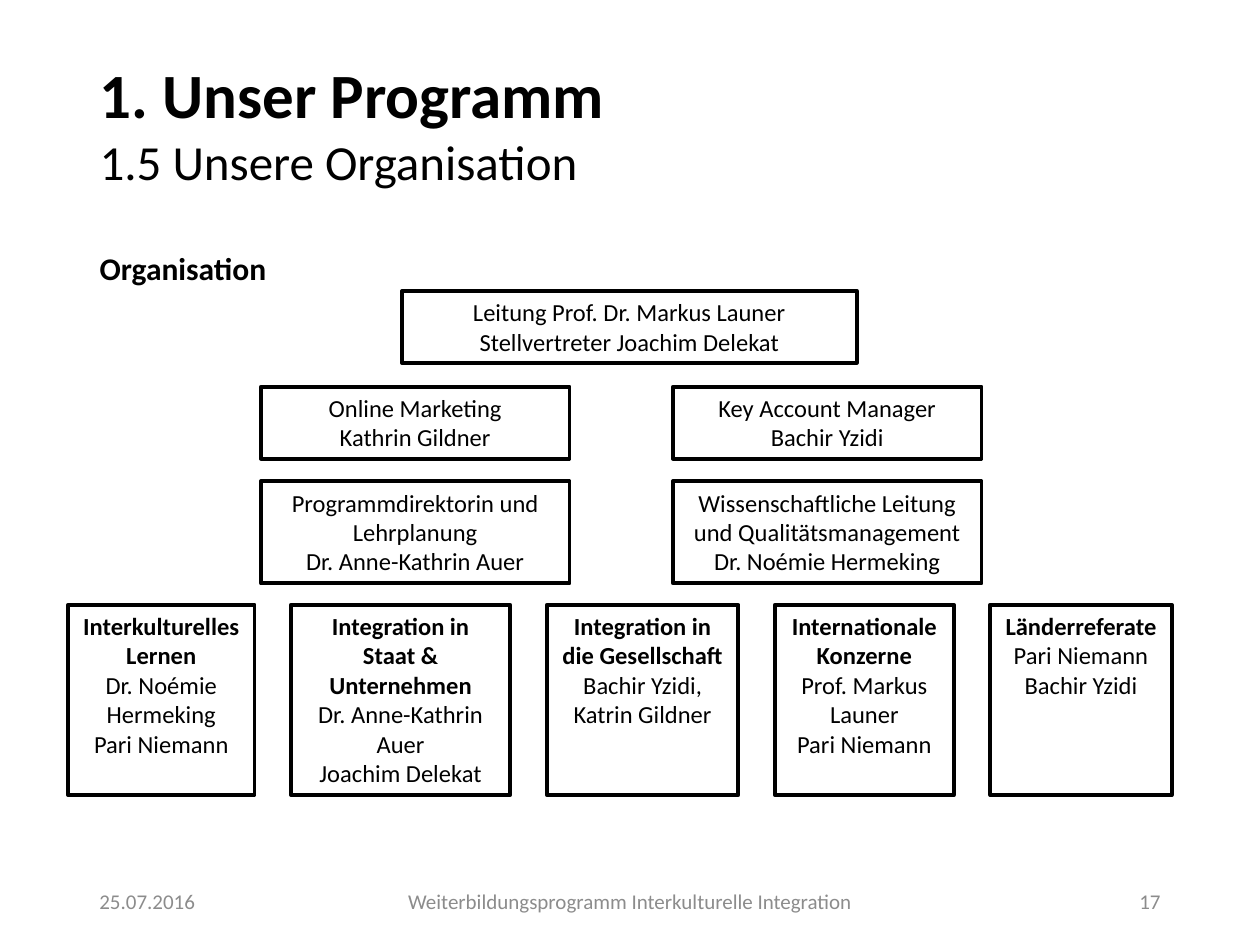
import pptx
import pptx.util
import pptx.dml.color
import pptx.enum.shapes
import pptx.enum.text
from pptx.util import Inches

Align = pptx.enum.text.PP_ALIGN
Anchor = pptx.enum.text.MSO_ANCHOR


class Theme:
    font = "Calibri"
    ink = pptx.dml.color.RGBColor.from_string("000000")
    gray = pptx.dml.color.RGBColor.from_string("8C8C8C")
    head = 36
    sub = 28
    label = 18
    body = 14
    foot = 12
    line = 2.25


def write(frame, rows, align, color=Theme.ink, anchor=Anchor.TOP):
    frame.word_wrap = True
    frame.auto_size = pptx.enum.text.MSO_AUTO_SIZE.NONE
    frame.vertical_anchor = anchor
    for i, (text, size, bold) in enumerate(rows):
        para = frame.paragraphs[0] if i == 0 else frame.add_paragraph()
        para.alignment = align
        run = para.add_run()
        run.text = text
        run.font.name = Theme.font
        run.font.size = pptx.util.Pt(size)
        run.font.bold = bold
        run.font.color.rgb = color


def box(left, top, width, height, bold, plain):
    shape = slide.shapes.add_shape(
        pptx.enum.shapes.MSO_SHAPE.RECTANGLE,
        Inches(left), Inches(top), Inches(width), Inches(height))
    shape.shadow.inherit = False
    shape.fill.background()
    shape.line.color.rgb = Theme.ink
    shape.line.width = pptx.util.Pt(Theme.line)
    rows = [(text, Theme.body, True) for text in bold]
    rows += [(text, Theme.body, False) for text in plain]
    write(shape.text_frame, rows, Align.CENTER)


deck = pptx.Presentation()
deck.slide_width = Inches(10)
deck.slide_height = Inches(7.5)
slide = deck.slides.add_slide(deck.slide_layouts[5])

title = slide.shapes.title
title.left, title.top = Inches(0.69), Inches(0.39)
title.width, title.height = Inches(6.97), Inches(1.95)
write(title.text_frame, [
    ("1. Unser Programm", Theme.head, True),
    ("1.5 Unsere Organisation", Theme.sub, False),
    ("Organisation", Theme.label, True),
], Align.LEFT)
title.text_frame.paragraphs[2].space_before = pptx.util.Pt(34)

box(3.19, 2.31, 3.61, 0.57, [],
    ["Leitung Prof. Dr. Markus Launer", "Stellvertreter Joachim Delekat"])

levels = [
    (3.07, 0.57, [
        ["Online Marketing", "Kathrin Gildner"],
        ["Key Account Manager", "Bachir Yzidi"]]),
    (3.82, 0.81, [
        ["Programmdirektorin und Lehrplanung", "Dr. Anne-Kathrin Auer"],
        ["Wissenschaftliche Leitung und Qualitätsmanagement",
         "Dr. Noémie Hermeking"]]),
]
for top, height, pair in levels:
    for left, plain in zip((2.07, 5.34), pair):
        box(left, top, 2.45, height, [], plain)

units = [
    (1.48, ["Interkulturelles Lernen"],
     ["Dr. Noémie Hermeking", "Pari Niemann"]),
    (1.74, ["Integration in Staat & Unternehmen"],
     ["Dr. Anne-Kathrin Auer", "Joachim Delekat"]),
    (1.52, ["Integration in die Gesellschaft"],
     ["Bachir Yzidi, Katrin Gildner"]),
    (1.42, ["Internationale", "Konzerne"],
     ["Prof. Markus Launer", "Pari Niemann"]),
    (1.44, ["Länderreferate"], ["Pari Niemann", "Bachir Yzidi"]),
]
left, gap = 0.54, 0.29
for width, bold, plain in units:
    box(left, 4.8, width, 1.51, bold, plain)
    left += width + gap

feet = [
    (0.69, 2.25, "25.07.2016", Align.LEFT),
    (2.94, 4.12, "Weiterbildungsprogramm Interkulturelle Integration",
     Align.CENTER),
    (7.06, 2.25, "17", Align.RIGHT),
]
for left, width, text, align in feet:
    foot = slide.shapes.add_textbox(
        Inches(left), Inches(6.95), Inches(width), Inches(0.4))
    write(foot.text_frame, [(text, Theme.foot, False)], align,
          Theme.gray, Anchor.MIDDLE)

deck.save("out.pptx")
